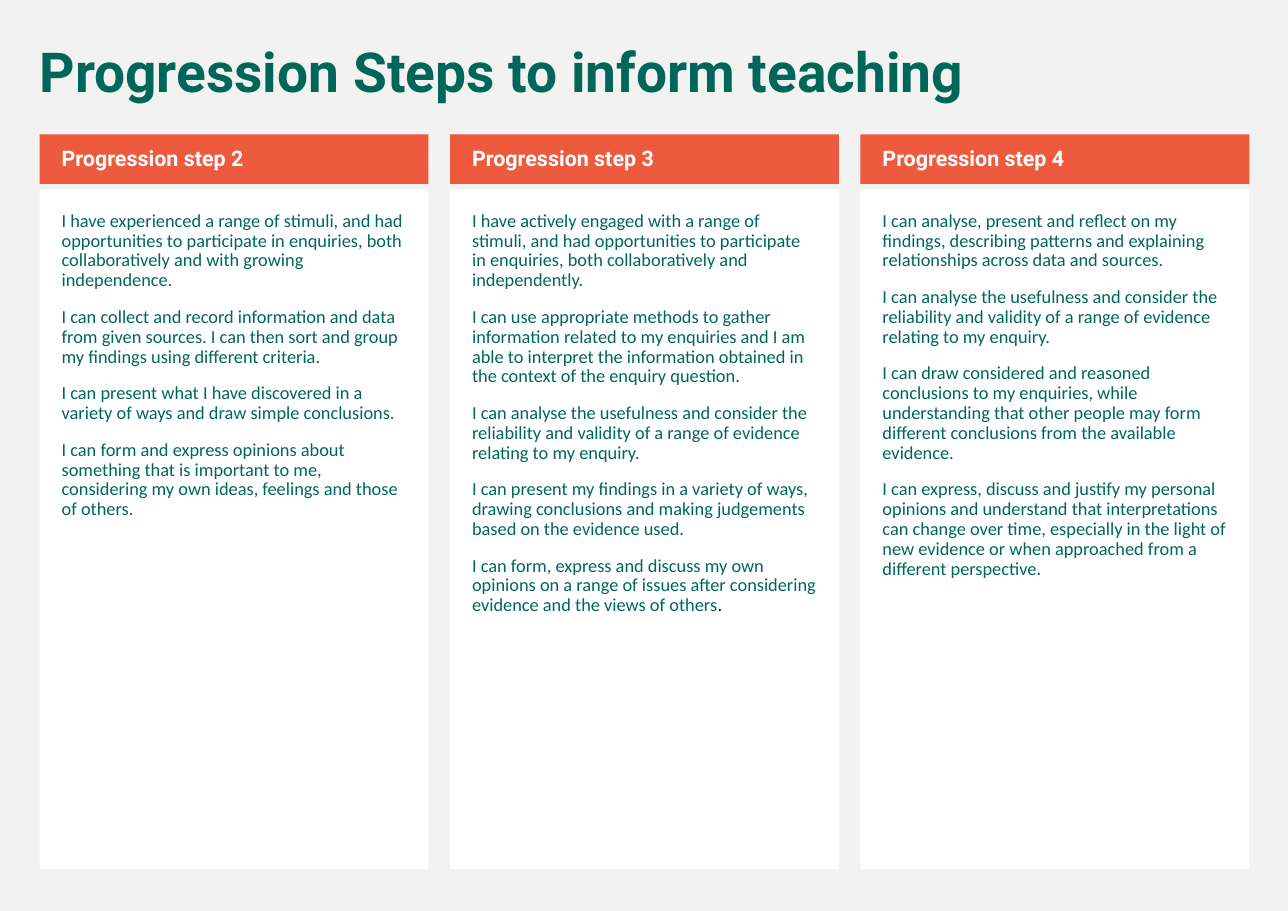
"""Build a slide comparing three progression steps in equal columns."""
from pptx import Presentation
from pptx.dml.color import RGBColor
from pptx.enum.shapes import MSO_SHAPE
from pptx.enum.text import MSO_ANCHOR, MSO_AUTO_SIZE, PP_ALIGN
from pptx.util import Inches, Pt

RECTANGLE = MSO_SHAPE.RECTANGLE
TOP, MIDDLE = MSO_ANCHOR.TOP, MSO_ANCHOR.MIDDLE
NO_FIT, LEFT = MSO_AUTO_SIZE.NONE, PP_ALIGN.LEFT

THEME = {
    "page": RGBColor.from_string("F2F2F2"),
    "panel": RGBColor.from_string("FFFFFF"),
    "banner": RGBColor.from_string("ED5A3E"),
    "green": RGBColor.from_string("006758"),
    "black": RGBColor.from_string("000000"),
    "title": {"name": "Roboto", "size": Pt(36), "bold": True},
    "heading": {"name": "Roboto", "size": Pt(14), "bold": True},
    "body": {"name": "Calibri", "size": Pt(12), "bold": False},
}
PARAGRAPH = {"alignment": LEFT, "line_spacing": 0.9, "space_before": Pt(11)}

WIDTH, HEIGHT = 11.69, 8.27
MARGIN, RIGHT_EDGE, COLUMN = 0.36, 11.34, 3.53
HEADING_TOP, HEADING_HEIGHT = 1.22, 0.45
PANEL_TOP, PANEL_HEIGHT = 1.72, 6.17

STEPS = [
    ("Progression step 2", [
        "I have experienced a range of stimuli, and had opportunities to participate in enquiries, "
        "both collaboratively and with growing independence.",
        "I can collect and record information and data from given sources. "
        "I can then sort and group my findings using different criteria.",
        "I can present what I have discovered in a variety of ways and draw simple conclusions.",
        "I can form and express opinions about something that is important to me, "
        "considering my own ideas, feelings and those of others.",
    ], ""),
    ("Progression step 3", [
        "I have actively engaged with a range of stimuli, and had opportunities to participate "
        "in enquiries, both collaboratively and independently.",
        "I can use appropriate methods to gather information related to my enquiries and I am able "
        "to interpret the information obtained in the context of the enquiry question.",
        "I can analyse the usefulness and consider the reliability and validity "
        "of a range of evidence relating to my enquiry.",
        "I can present my findings in a variety of ways, drawing conclusions "
        "and making judgements based on the evidence used.",
        "I can form, express and discuss my own opinions on a range of issues "
        "after considering evidence and the views of others",
    ], "."),
    ("Progression step 4", [
        "I can analyse, present and reflect on my findings, describing patterns "
        "and explaining relationships across data and sources.",
        "I can analyse the usefulness and consider the reliability and validity "
        "of a range of evidence relating to my enquiry.",
        "I can draw considered and reasoned conclusions to my enquiries, while understanding "
        "that other people may form different conclusions from the available evidence.",
        "I can express, discuss and justify my personal opinions and understand "
        "that interpretations can change over time, especially in the light of new evidence "
        "or when approached from a different perspective.",
    ], ""),
]


def write(shape, paragraphs, font, colour, anchor, insets):
    frame = shape.text_frame
    sides = ("margin_left", "margin_top", "margin_right", "margin_bottom")
    layout = {"word_wrap": True, "auto_size": NO_FIT, "vertical_anchor": anchor}
    layout.update(zip(sides, map(Inches, insets)))
    for attribute, value in layout.items():
        setattr(frame, attribute, value)
    frame.text = "\n".join(paragraphs)
    for paragraph in frame.paragraphs:
        for attribute, value in PARAGRAPH.items():
            setattr(paragraph, attribute, value)
        style(paragraph.runs[0], font, colour)


def style(run, font, colour):
    for attribute, value in THEME[font].items():
        setattr(run.font, attribute, value)
    run.font.color.rgb = THEME[colour]


deck = Presentation()
deck.slide_width, deck.slide_height = Inches(WIDTH), Inches(HEIGHT)
slide = deck.slides.add_slide(deck.slide_layouts[5])
slide.background.fill.solid()
slide.background.fill.fore_color.rgb = THEME["page"]

title = slide.shapes.title
title_place = {"left": 0.26, "top": 0.36, "width": 11.08, "height": 0.65}
for attribute, value in title_place.items():
    setattr(title, attribute, Inches(value))
write(title, ["Progression Steps to inform teaching"], "title", "green", TOP, (0.1, 0.05, 0.1, 0.05))

pitch = (RIGHT_EDGE - MARGIN - COLUMN) / (len(STEPS) - 1)
for index, (heading, statements, closing) in enumerate(STEPS):
    left = MARGIN + index * pitch
    bands = [
        (PANEL_TOP, PANEL_HEIGHT, "panel", statements, "body", "green", TOP, (0.2, 0.2, 0.2, 0.2)),
        (HEADING_TOP, HEADING_HEIGHT, "banner", [heading], "heading", "panel", MIDDLE, (0.2, 0.05, 0.1, 0.05)),
    ]
    for top, height, fill, words, font, colour, anchor, insets in bands:
        band = slide.shapes.add_shape(RECTANGLE, *map(Inches, (left, top, COLUMN, height)))
        band.shadow.inherit = False
        band.fill.solid()
        band.fill.fore_color.rgb = THEME[fill]
        band.line.fill.background()
        write(band, words, font, colour, anchor, insets)
        if closing and words is statements:
            full_stop = band.text_frame.paragraphs[-1].add_run()
            full_stop.text = closing
            style(full_stop, "body", "black")

deck.save("out.pptx")
